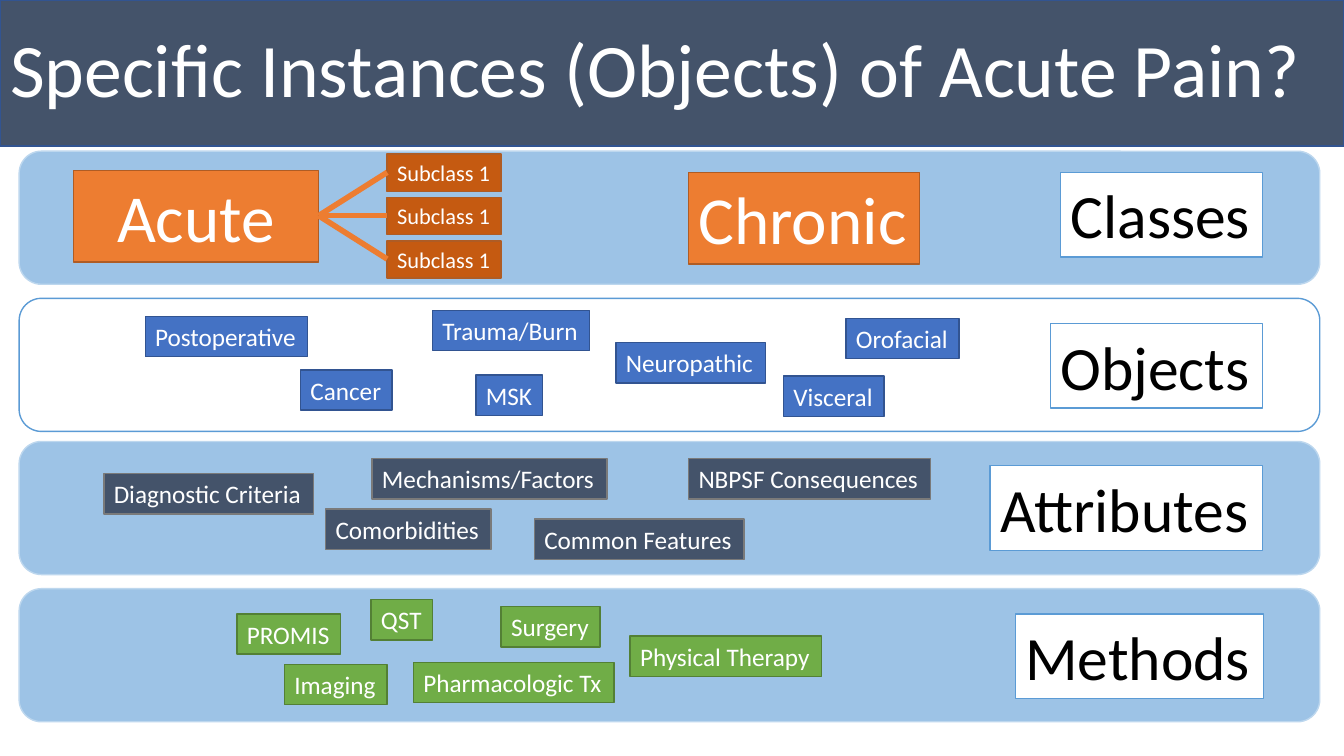
from lxml.etree import SubElement
from pptx import Presentation
from pptx.dml.color import RGBColor
from pptx.enum.shapes import MSO_CONNECTOR as Conn, MSO_SHAPE as Shape
from pptx.enum.text import MSO_ANCHOR as Anchor, MSO_AUTO_SIZE as Fit, PP_ALIGN as Align
from pptx.oxml.ns import qn
from pptx.util import Inches, Pt

WHITE = RGBColor(0xFF, 0xFF, 0xFF)
BLACK = RGBColor(0, 0, 0)
SLATE = RGBColor(0x44, 0x53, 0x6A)
GRAY = RGBColor(0x7A, 0x7A, 0x7A)
SKY = RGBColor(0x9D, 0xC3, 0xE6)
PALE = RGBColor(0xBD, 0xD7, 0xEE)
AZURE = RGBColor(0x5B, 0x9B, 0xD5)
BLUE = RGBColor(0x44, 0x72, 0xC4)
NAVY = RGBColor(0x32, 0x54, 0x91)
ORANGE = RGBColor(0xED, 0x7D, 0x31)
RUST = RGBColor(0xC5, 0x5A, 0x11)
BROWN = RGBColor(0xAF, 0x5C, 0x24)
GREEN = RGBColor(0x70, 0xAD, 0x47)
MOSS = RGBColor(0x53, 0x80, 0x35)

# Bands: top, fill, line
BANDS = [(1.5, SKY, PALE), (2.96, WHITE, AZURE), (4.38, SKY, PALE), (5.84, SKY, PALE)]

# Band labels: text, left, top, width
LABELS = [
    ("Classes", 10.52, 1.71, 2),
    ("Objects", 10.42, 3.21, 2.1),
    ("Attributes", 9.82, 4.62, 2.7),
    ("Methods", 10.07, 6.09, 2.46),
]

# Tags of each band: fill, line, then text, left, top, width
TAGS = [
    (BLUE, NAVY, [
        ("Postoperative", 1.44, 3.14, 1.61),
        ("Cancer", 2.98, 3.67, 0.91),
        ("Trauma/Burn", 4.29, 3.08, 1.56),
        ("MSK", 4.72, 3.72, 0.66),
        ("Neuropathic", 6.11, 3.4, 1.48),
        ("Visceral", 7.77, 3.73, 1),
        ("Orofacial", 8.39, 3.16, 1.12),
    ]),
    (SLATE, GRAY, [
        ("Diagnostic Criteria", 1.03, 4.7, 2.08),
        ("Comorbidities", 3.23, 5.05, 1.64),
        ("Mechanisms/Factors", 3.69, 4.55, 2.33),
        ("Common Features", 5.3, 5.15, 2.08),
        ("NBPSF Consequences", 6.83, 4.55, 2.4),
    ]),
    (GREEN, MOSS, [
        ("PROMIS", 2.35, 6.09, 1.03),
        ("Imaging", 2.82, 6.59, 1.02),
        ("QST", 3.68, 5.95, 0.61),
        ("Pharmacologic Tx", 4.1, 6.57, 1.99),
        ("Surgery", 4.97, 6.02, 0.98),
        ("Physical Therapy", 6.25, 6.31, 1.9),
    ]),
]


def paint(shape, fill, line):
    shape.fill.solid()
    shape.fill.fore_color.rgb = fill
    shape.line.color.rgb = line
    shape.line.width = Pt(1)


def write(shape, text, size, color, align=Align.LEFT):
    para = shape.text_frame.paragraphs[0]
    para.alignment = align
    run = para.add_run()
    run.text = text
    run.font.name = "Calibri"
    run.font.size = Pt(size)
    run.font.color.rgb = color
    return para


def add_title(slide, text):
    title = slide.shapes.title
    title.left, title.top = Inches(0), Inches(0)
    title.width, title.height = Inches(13.33), Inches(1.45)
    paint(title, SLATE, NAVY)
    frame = title.text_frame
    frame.vertical_anchor = Anchor.MIDDLE
    frame.auto_size = Fit.NONE
    frame.word_wrap = True
    write(title, text, 54, WHITE).line_spacing = 0.9


def add_band(slide, top, fill, line):
    band = slide.shapes.add_shape(
        Shape.ROUNDED_RECTANGLE, Inches(0.19), Inches(top), Inches(12.9), Inches(1.32))
    band.shadow.inherit = False
    paint(band, fill, line)


def add_box(slide, text, left, top, width, height, size, fill, line,
            color=WHITE, wrap=False, align=Align.LEFT):
    box = slide.shapes.add_textbox(
        Inches(left), Inches(top), Inches(width), Inches(height))
    paint(box, fill, line)
    box.text_frame.word_wrap = wrap
    box.text_frame.auto_size = Fit.SHAPE_TO_FIT_TEXT
    write(box, text, size, color, align)


def add_link(slide, start, end):
    link = slide.shapes.add_connector(Conn.STRAIGHT, *map(Inches, start + end))
    link.line.color.rgb = ORANGE
    link.line.width = Pt(4)
    SubElement(link._element.spPr, qn("a:effectLst"))


def main():
    deck = Presentation()
    deck.slide_width, deck.slide_height = Inches(13.33), Inches(7.5)
    slide = deck.slides.add_slide(deck.slide_layouts[5])
    add_title(slide, "Specific Instances (Objects) of Acute Pain?")

    # Bands and their labels
    for band in BANDS:
        add_band(slide, *band)
    for text, left, top, width in LABELS:
        add_box(slide, text, left, top, width, 0.84, 44, WHITE, AZURE, BLACK)

    # Classes with the subclass tree
    add_box(slide, "Acute", 0.73, 1.69, 2.43, 0.91, 48, ORANGE, BROWN,
            wrap=True, align=Align.CENTER)
    add_box(slide, "Chronic", 6.83, 1.71, 2.29, 0.91, 48, ORANGE, BROWN)
    for row in range(3):
        top = 1.53 + 0.43 * row
        add_box(slide, "Subclass 1", 3.84, top, 1.13, 0.37, 16, RUST, BROWN)
        add_link(slide, (3.16, 2.14), (3.84, top + 0.18))

    # Tags inside the other bands
    for fill, line, tags in TAGS:
        for text, left, top, width in tags:
            add_box(slide, text, left, top, width, 0.4, 18, fill, line)

    deck.save("out.pptx")


if __name__ == "__main__":
    main()
